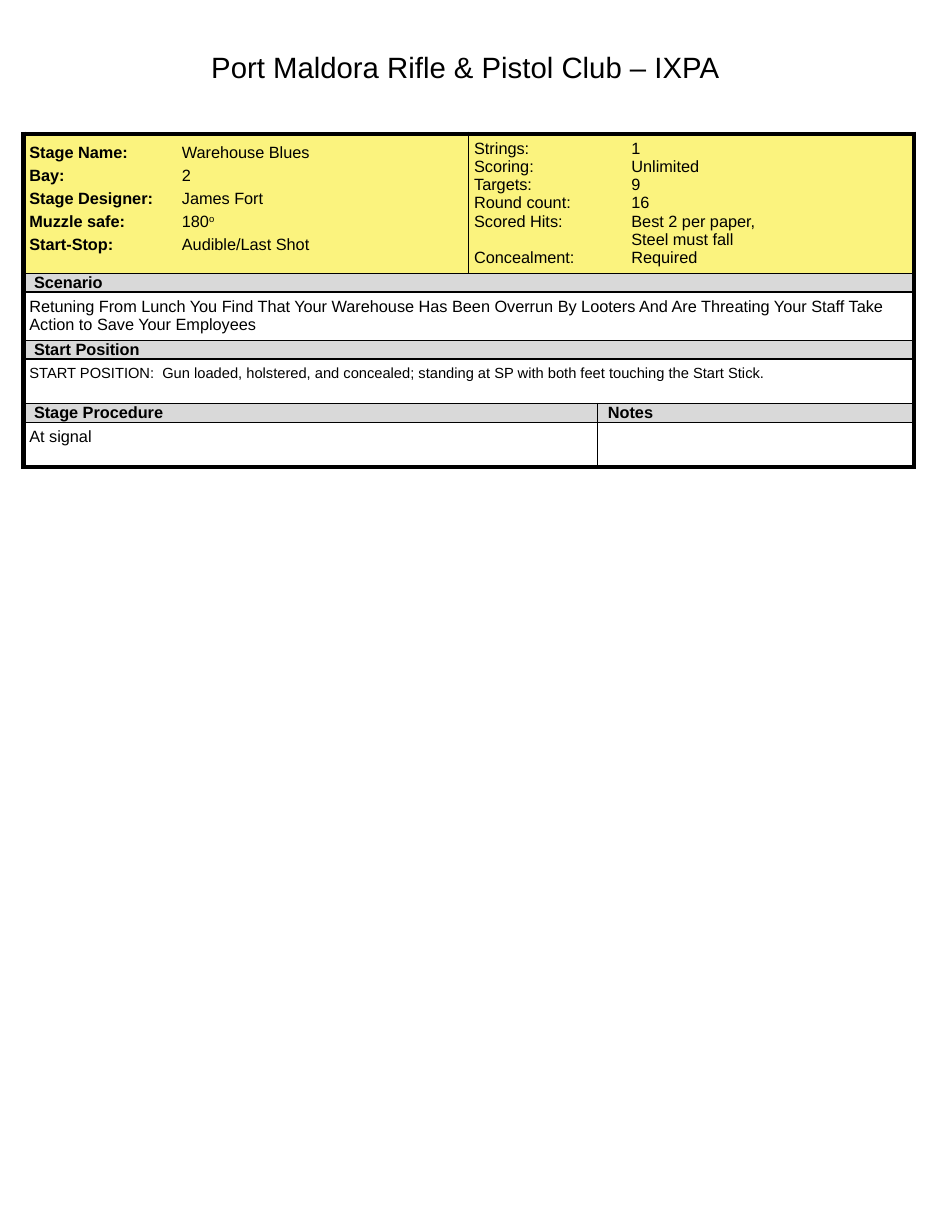
from lxml import etree
from pptx import Presentation
from pptx.dml.color import RGBColor
from pptx.enum.text import MSO_ANCHOR, PP_ALIGN
from pptx.oxml.ns import qn
from pptx.util import Pt

CENTER = PP_ALIGN.CENTER
TOP, MIDDLE = MSO_ANCHOR.TOP, MSO_ANCHOR.MIDDLE
PX = 9144  # 100 px to the inch
COLORS = {"ink": "000000", "info": "FBF37E", "head": "D9D9D9"}
FONT = "Arial"

COLS = [130, 249, 110, 24, 246]
ROWS = [119, 16, 41, 16, 38, 16, 38]
# Vertical rules inside the table, as (row, column on the right)
RULES = {(0, 2), (5, 3), (6, 3)}

LABELS = ["Stage Name:", "Bay:", "Stage Designer:", "Muzzle safe:", "Start-Stop:"]
VALUES = ["Warehouse Blues", "2", "James Fort", "180^o", "Audible/Last Shot"]
COUNTS = ["Strings:", "Scoring:", "Targets:", "Round count:", "Scored Hits:",
          "Concealment:"]
LIMITS = ["1", "Unlimited", "9", "16", "Best 2 per paper,", "Steel must fall",
          "Required"]
STORY = ("Retuning From Lunch You Find That Your Warehouse Has Been Overrun By "
         "Looters And Are Threating Your Staff Take Action to Save Your Employees")
START = ("START POSITION:  Gun loaded, holstered, and concealed; standing at SP "
         "with both feet touching the Start Stick.")


def px(n):
    return int(n * PX)


def style(para, size, bold=False):
    font = para.font
    font.name, font.size, font.bold = FONT, Pt(size), bold
    font.color.rgb = RGBColor.from_string(COLORS["ink"])


def add_title(slide, text):
    title = slide.shapes.title
    title.left, title.top, title.width, title.height = map(px, (18, 37, 757, 40))
    frame = title.text_frame
    frame.text = text
    frame.vertical_anchor = MIDDLE
    para = frame.paragraphs[0]
    para.alignment = CENTER
    style(para, 18)


def write(cell, lines, size=10, bold=False, pitch=None):
    """Fill a cell with lines; text after ^ is raised."""
    frame = cell.text_frame
    for i, line in enumerate(lines):
        para = frame.add_paragraph() if i else frame.paragraphs[0]
        style(para, size, bold)
        if pitch:
            para.line_spacing = Pt(pitch)
        base, _, high = line.partition("^")
        para.add_run().text = base
        if high:
            run = para.add_run()
            run.text = high
            run._r.get_or_add_rPr().set("baseline", "30000")


def inset(cell, left, rest):
    cell.margin_left = px(left)
    cell.margin_top = cell.margin_right = cell.margin_bottom = px(rest)


def put(table, row, col, span, lines, fill=None, **kw):
    """Place a body cell across span columns."""
    cell = table.cell(row, col)
    if span > 1:
        cell.merge(table.cell(row, col + span - 1))
    inset(cell, 5, 5)
    cell.vertical_anchor = TOP
    write(cell, lines, **kw)
    for i in range(col, col + span):
        paint(table.cell(row, i), fill)
    return cell


def paint(cell, fill):
    if fill:
        cell.fill.solid()
        cell.fill.fore_color.rgb = RGBColor.from_string(COLORS[fill])
    else:
        cell.fill.background()


def put_head(table, row, col, span, text):
    cell = put(table, row, col, span, [text], "head", bold=True)
    inset(cell, 9, 0)
    cell.vertical_anchor = MIDDLE


def add_edge(cell, side, index, width):
    line = etree.Element(qn("a:ln" + side), w=str(Pt(width)))
    if width:
        fill = etree.SubElement(line, qn("a:solidFill"))
        etree.SubElement(fill, qn("a:srgbClr"), val=COLORS["ink"])
    else:
        etree.SubElement(line, qn("a:noFill"))
    cell._tc.get_or_add_tcPr().insert(index, line)


def add_borders(table):
    """Heavy frame, thin rows, and thin verticals only where RULES says."""
    def upright(row, col):
        return 3 if col in (0, len(COLS)) else int((row, col) in RULES)

    def level(row):
        return 3 if row in (0, len(ROWS)) else 1

    for r in range(len(ROWS)):
        for c in range(len(COLS)):
            cell = table.cell(r, c)
            end = c + (cell.span_width if cell.is_merge_origin else 1)
            sides = {"L": upright(r, c), "R": upright(r, end),
                     "T": level(r), "B": level(r + 1)}
            for i, (side, width) in enumerate(sides.items()):
                add_edge(cell, side, i, width)


def add_sheet(slide):
    shape = slide.shapes.add_table(len(ROWS), len(COLS), px(20), px(114),
                                   px(sum(COLS)), px(sum(ROWS)))
    table = shape.table
    table.first_row = table.horz_banding = False
    for col, width in zip(table.columns, COLS):
        col.width = px(width)
    for row, height in zip(table.rows, ROWS):
        row.height = px(height)

    # Stage facts
    put(table, 0, 0, 1, LABELS, "info", bold=True, pitch=14)
    put(table, 0, 1, 1, VALUES, "info", pitch=14)
    counts = put(table, 0, 2, 2, COUNTS, "info")
    counts.text_frame.paragraphs[-1].space_before = Pt(11.2)
    put(table, 0, 4, 1, LIMITS, "info")

    # Scenario and start
    put_head(table, 1, 0, 5, "Scenario")
    put(table, 2, 0, 5, [STORY])
    put_head(table, 3, 0, 5, "Start Position")
    put(table, 4, 0, 5, [START], size=9)

    # Procedure and notes
    put_head(table, 5, 0, 3, "Stage Procedure")
    put_head(table, 5, 3, 2, "Notes")
    put(table, 6, 0, 3, ["At signal"])
    inset(put(table, 6, 3, 2, []), 5, 0)
    add_borders(table)


def main():
    prs = Presentation()
    prs.slide_width, prs.slide_height = px(800), px(1050)
    slide = prs.slides.add_slide(prs.slide_layouts[5])
    add_sheet(slide)
    add_title(slide, "Port Maldora Rifle & Pistol Club – IXPA")
    prs.save("out.pptx")


if __name__ == "__main__":
    main()
